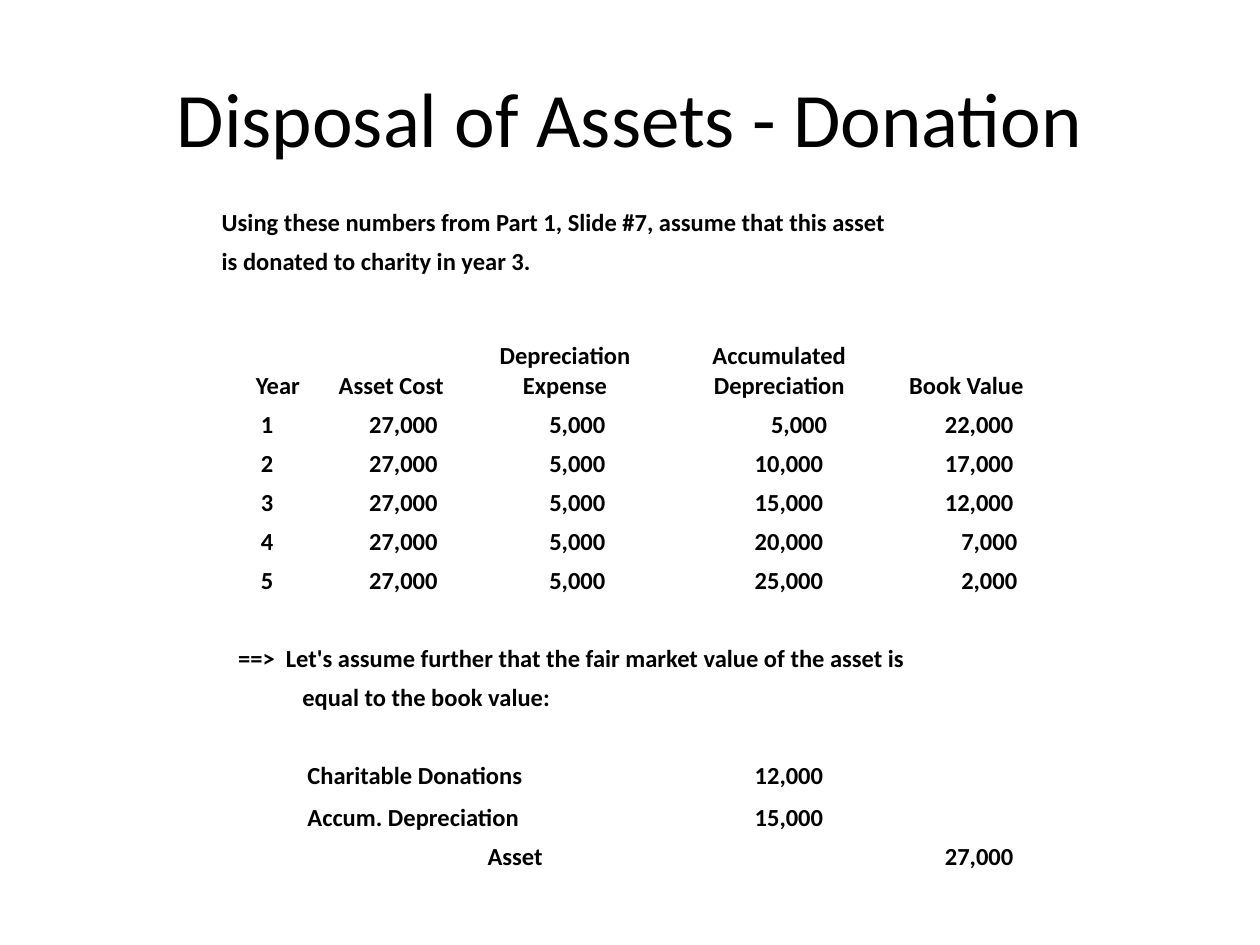
from pptx import Presentation
from pptx.dml.color import RGBColor
from pptx.enum import text
from pptx.util import Inches, Pt

COLORS = {"ink": "000000"}
LEFT, MID, RIGHT = text.PP_ALIGN.LEFT, text.PP_ALIGN.CENTER, text.PP_ALIGN.RIGHT
WIDTHS = [0.64, 1.43, 1.33, 0.3, 1.47, 1.5]
HEIGHTS = [0.31] * 3 + [0.67] + [0.31] * 10 + [0.33, 0.31]
COST, RATE = 27000, 5000


class Deck:
    """Holds the style and the current slide."""

    font, size = "Calibri", 14

    def __init__(self):
        self.prs = Presentation()
        self.prs.slide_width, self.prs.slide_height = Inches(10), Inches(7.5)
        self.slide = self.prs.slides.add_slide(self.prs.slide_layouts[5])

    def add_run(self, para, words, size, bold, align):
        para.alignment = align
        run = para.add_run()
        run.text = words
        run.font.name, run.font.size, run.font.bold = self.font, Pt(size), bold
        run.font.color.rgb = RGBColor.from_string(COLORS["ink"])

    def title(self, words, box):
        shape = self.slide.shapes.title
        shape.left, shape.top, shape.width, shape.height = map(Inches, box)
        frame = shape.text_frame
        frame.vertical_anchor = text.MSO_ANCHOR.MIDDLE
        self.add_run(frame.paragraphs[0], words, 44, False, MID)

    def table(self, left, top, widths, heights):
        frame = self.slide.shapes.add_table(
            len(heights), len(widths), Inches(left), Inches(top),
            Inches(sum(widths)), Inches(sum(heights)))
        self.grid = frame.table
        self.grid.first_row = self.grid.horz_banding = False
        for col, width in zip(self.grid.columns, widths):
            col.width = Inches(width)
        for row, height in zip(self.grid.rows, heights):
            row.height = Inches(height)
        for cell in self.grid.iter_cells():
            cell.fill.background()
            cell.vertical_anchor = text.MSO_ANCHOR.BOTTOM
            cell.margin_left = cell.margin_right = cell.margin_top = Inches(0.01)
            cell.margin_bottom = 0
            # Blank cells must not stretch their rows
            end = cell.text_frame.paragraphs[0]._p.get_or_add_endParaRPr()
            end.set("sz", str(self.size * 100))

    def cell(self, row, col, words, indent=0.01, align=LEFT, span=1):
        cell = self.grid.cell(row, col)
        if span > 1:
            cell.merge(self.grid.cell(row, col + span - 1))
        cell.margin_left = Inches(indent)
        self.add_run(cell.text_frame.paragraphs[0], words, self.size, True, align)


def main():
    deck = Deck()
    deck.title("Disposal of Assets - Donation", (0.5, 0.3, 9, 1.25))
    deck.table(1.75, 1.58, WIDTHS, HEIGHTS)

    # Introduction
    deck.cell(0, 0, "Using these numbers from Part 1, Slide #7, "
                    "assume that this asset", span=6)
    deck.cell(1, 0, "is donated to charity in year 3.", span=3)

    # Column heads
    deck.cell(3, 0, "Year", align=RIGHT)
    heads = {1: "Asset Cost", 2: "Depreciation Expense",
             4: "Accumulated Depreciation", 5: "Book Value"}
    for col, head in heads.items():
        deck.cell(3, col, head, align=MID)

    # Depreciation schedule; short sums in the last columns sit further in
    for year in range(1, 6):
        row, total = 3 + year, RATE * year
        book = COST - total
        deck.cell(row, 0, str(year), 0.32)
        deck.cell(row, 1, f"{COST:,}", 0.54)
        deck.cell(row, 2, f"{RATE:,}", 0.54)
        deck.cell(row, 4, f"{total:,}", 0.54 if total >= 10000 else 0.67)
        deck.cell(row, 5, f"{book:,}", 0.58 if book >= 10000 else 0.71)

    # Assumption
    deck.cell(10, 0, "==>  Let's assume further that the fair market value "
                     "of the asset is", 0.14, span=6)
    deck.cell(11, 1, "equal to the book value:", span=2)

    # Journal entry
    deck.cell(13, 1, "Charitable Donations", 0.05, span=2)
    deck.cell(13, 4, "12,000", 0.54)
    deck.cell(14, 1, "Accum. Depreciation", 0.05, span=2)
    deck.cell(14, 4, "15,000", 0.54)
    deck.cell(15, 2, "Asset", 0.05)
    deck.cell(15, 5, "27,000", 0.58)

    deck.prs.save("out.pptx")


if __name__ == "__main__":
    main()
